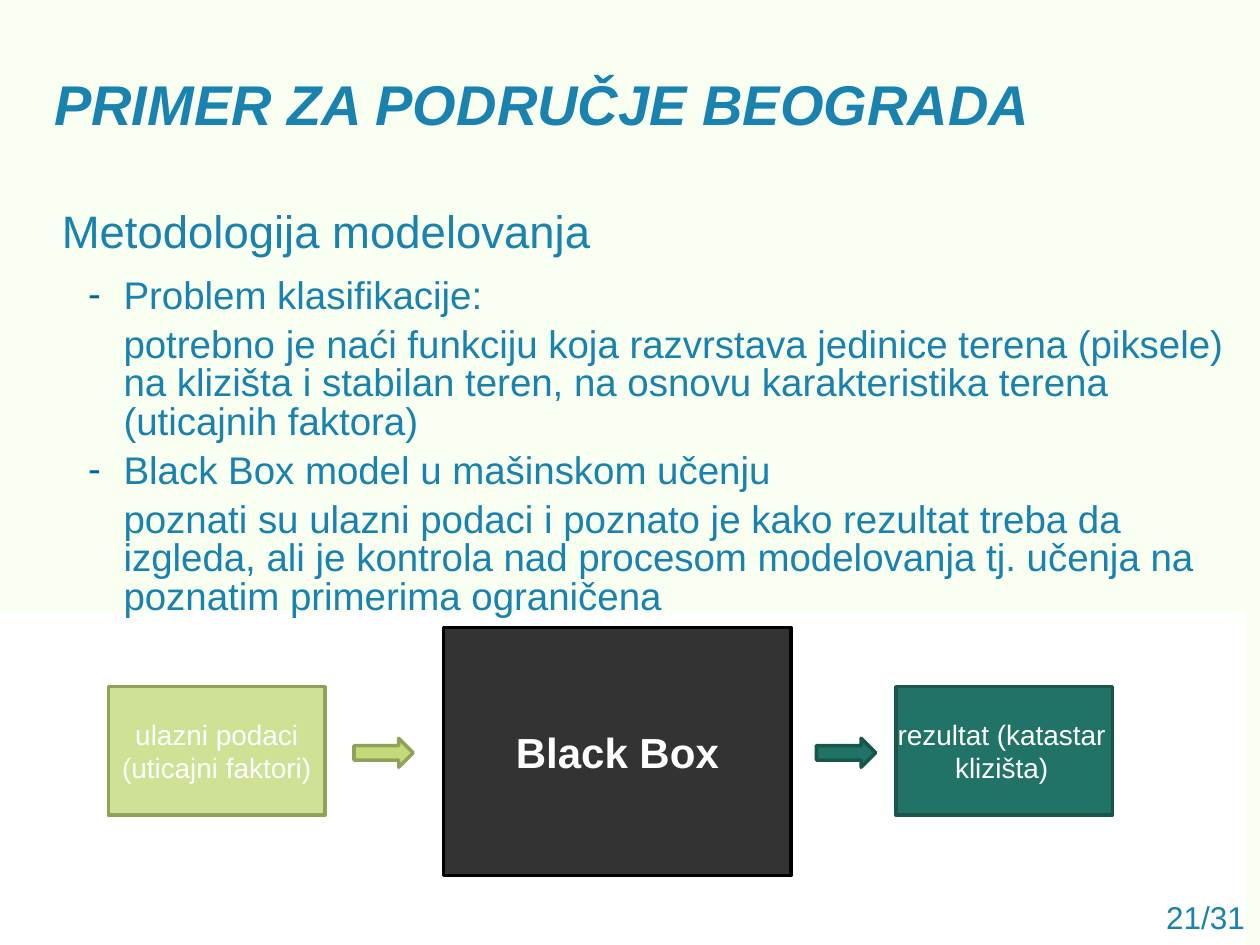
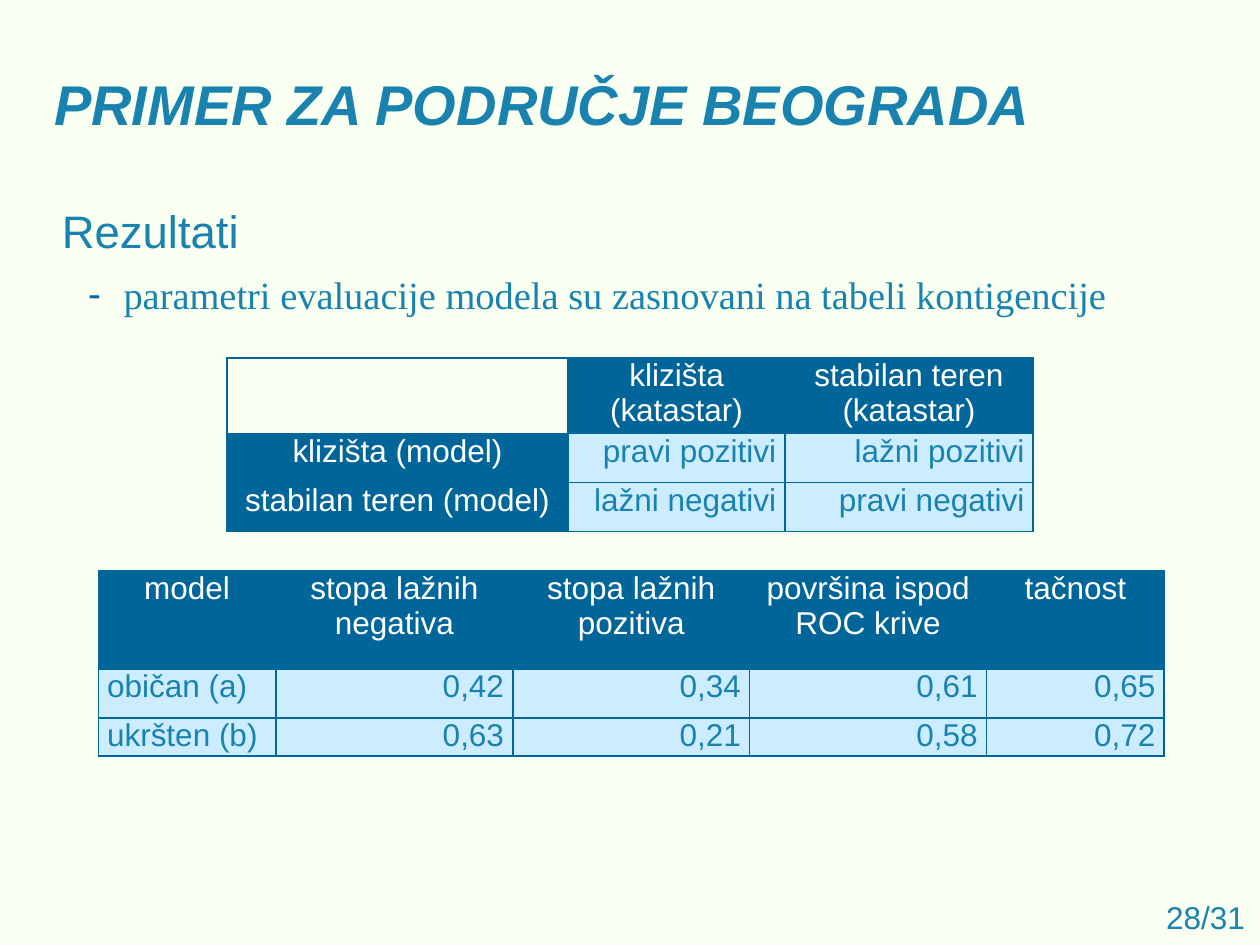
from lxml import etree
from pptx import Presentation
from pptx.dml.color import RGBColor
from pptx.enum import shapes, text
from pptx.oxml import ns
from pptx.util import Inches, Pt

CREAM = RGBColor(0xF9, 0xFF, 0xF1)
WHITE = RGBColor(0xFF, 0xFF, 0xFF)
BLACK = RGBColor(0x00, 0x00, 0x00)
BLUE = RGBColor(0x19, 0x82, 0xAF)
NAVY = RGBColor(0x00, 0x66, 0x99)
PALE = RGBColor(0xCC, 0xEC, 0xFF)
LIME = RGBColor(0xC3, 0xDA, 0x7A)
OLIVE = RGBColor(0x90, 0xA1, 0x5A)
TEAL = RGBColor(0x20, 0x73, 0x66)
PINE = RGBColor(0x18, 0x56, 0x4C)

LEFT, MID, RIGHT = text.PP_ALIGN.LEFT, text.PP_ALIGN.CENTER, text.PP_ALIGN.RIGHT
JUST = text.PP_ALIGN.JUSTIFY
RECT, ARROW = shapes.MSO_SHAPE.RECTANGLE, shapes.MSO_SHAPE.RIGHT_ARROW


def add(parent, tag, **attrs):
    """Append a drawing element."""
    return etree.SubElement(parent, ns.qn("a:" + tag), attrs)


def style(para, size, color, align=LEFT, face="Arial"):
    """Set the font and alignment of a paragraph."""
    para.alignment = align
    para.font.name = face
    para.font.size = Pt(size)
    para.font.color.rgb = color


prs = Presentation()
prs.slide_width, prs.slide_height = Inches(10), Inches(7.5)
back = prs.slide_master.background.fill
back.solid()
back.fore_color.rgb = CREAM

# Wording of each page: number, heading, (has dash, line) items, face, alignment
pages = [
    ("21/31", "Metodologija modelovanja", [
        (True, "Problem klasifikacije:"),
        (False, "potrebno je naći funkciju koja razvrstava jedinice terena (piksele) "
                "na klizišta i stabilan teren, na osnovu karakteristika terena "
                "(uticajnih faktora)"),
        (True, "Black Box model u mašinskom učenju"),
        (False, "poznati su ulazni podaci i poznato je kako rezultat treba da izgleda, "
                "ali je kontrola nad procesom modelovanja tj. učenja na poznatim "
                "primerima ograničena"),
    ], "Arial", LEFT),
    ("28/31", "Rezultati", [
        (True, "parametri evaluacije modela su zasnovani na tabeli kontigencije"),
    ], "Times New Roman", JUST),
]

# Title, list and page number
slides = []
for num, head, items, face, align in pages:
    slide = prs.slides.add_slide(prs.slide_layouts[1])
    slides.append(slide)
    title, body = slide.placeholders
    note = slide.shapes.add_textbox(Inches(7.65), Inches(7.08), Inches(2.33), Inches(0.4))
    note.text_frame.text = num
    style(note.text_frame.paragraphs[0], 18, BLUE, RIGHT)

    title.left, title.top, title.width, title.height = map(Inches, (0.33, 0.5, 9.5, 0.92))
    frame = title.text_frame
    frame.text = "PRIMER ZA PODRUČJE BEOGRADA"
    frame.auto_size = text.MSO_AUTO_SIZE.NONE
    frame.vertical_anchor = text.MSO_ANCHOR.TOP
    para = frame.paragraphs[0]
    style(para, 32, BLUE)
    para.font.bold = para.font.italic = True

    body.left, body.top, body.width, body.height = map(Inches, (0.49, 1.61, 9.45, 4.68))
    frame = body.text_frame
    frame.auto_size = text.MSO_AUTO_SIZE.NONE
    frame.margin_left = frame.margin_right = frame.margin_top = frame.margin_bottom = 0
    frame.text = head
    para = frame.paragraphs[0]
    props = para._p.get_or_add_pPr()
    props.set("marL", "0")
    props.set("indent", "0")
    add(props, "buNone")
    style(para, 26, BLUE)
    para.space_before, para.space_after = Pt(0), Pt(12)
    for dash, line in items:
        para = frame.add_paragraph()
        para.text = line
        para.level = 1
        props = para._p.get_or_add_pPr()
        props.set("marL", str(Inches(0.49)))
        props.set("indent", str(Inches(-0.28) if dash else 0))
        if dash:
            add(add(props, "buClr"), "srgbClr", val=str(NAVY))
            add(props, "buChar", char="-")
        else:
            add(props, "buNone")
        style(para, 22, BLUE, align, face)
        para.line_spacing = Pt(22)
        para.space_before, para.space_after = Pt(0), Pt(6)

# Black box diagram: white band first, then boxes and arrows
flow, results = slides
parts = [
    (RECT, 0, 4.86, 9.89, 2.64, WHITE, 100, None, "", 16),
    (RECT, 0.86, 5.45, 1.72, 1.02, LIME, 80, OLIVE, "ulazni podaci (uticajni faktori)", 16),
    (RECT, 7.11, 5.45, 1.72, 1.02, TEAL, 100, PINE, "rezultat (katastar klizišta)", 16),
    (RECT, 3.52, 4.98, 2.76, 1.97, BLACK, 80, BLACK, "Black Box", 24),
    (ARROW, 2.81, 5.86, 0.47, 0.23, LIME, 100, OLIVE, "", 16),
    (ARROW, 6.48, 5.86, 0.47, 0.23, TEAL, 100, PINE, "", 16),
]
for kind, x, y, w, h, color, alpha, edge, label, size in parts:
    box = flow.shapes.add_shape(kind, Inches(x), Inches(y), Inches(w), Inches(h))
    box.shadow.inherit = False
    box.fill.solid()
    box.fill.fore_color.rgb = color
    if alpha < 100:
        tint = box._element.spPr.find(".//" + ns.qn("a:srgbClr"))
        add(tint, "alpha", val=str(alpha * 1000))
    if edge is None:
        box.line.fill.background()
        flow.shapes._spTree.insert(2, box._element)
    else:
        box.line.color.rgb = edge
        box.line.width = Pt(2)
    if label:
        frame = box.text_frame
        frame.text = label
        frame.word_wrap = True
        frame.vertical_anchor = text.MSO_ANCHOR.MIDDLE
        style(frame.paragraphs[0], size, WHITE, MID)
        frame.paragraphs[0].font.bold = size == 24
        if color == TEAL:
            frame.margin_left, frame.margin_right = 0, Inches(0.04)

# Result tables: place, columns, rows, whether the first column is a header, cells
tables = [
    (0.78, 4.53, [1.41, 1.88, 1.88, 1.88, 1.41], [0.78, 0.39, 0.28], False, [
        ["model", "stopa lažnih negativa", "stopa lažnih pozitiva",
         "površina ispod ROC krive", "tačnost"],
        ["običan (a)", "0,42", "0,34", "0,61", "0,65"],
        ["ukršten (b)", "0,63", "0,21", "0,58", "0,72"],
    ]),
    (1.8, 2.84, [2.71, 1.72, 1.97], [0.56, 0.39, 0.39], True, [
        ["", "klizišta\n(katastar)", "stabilan teren\n(katastar)"],
        ["klizišta (model)", "pravi pozitivi", "lažni pozitivi"],
        ["stabilan teren (model)", "lažni negativi", "pravi negativi"],
    ]),
]
for x, y, cols, rows, side, data in tables:
    grid = results.shapes.add_table(len(rows), len(cols), Inches(x), Inches(y),
                                    Inches(sum(cols)), Inches(sum(rows))).table
    grid.first_row = grid.horz_banding = False
    for col, w in zip(grid.columns, cols):
        col.width = Inches(w)
    for row, h in zip(grid.rows, rows):
        row.height = Inches(h)
    for r, line in enumerate(data):
        for c, word in enumerate(line):
            cell = grid.cell(r, c)
            cell.margin_left = cell.margin_right = Inches(0.07)
            cell.margin_top = cell.margin_bottom = 0
            props = cell._tc.get_or_add_tcPr()
            for edge in ("lnL", "lnR", "lnT", "lnB"):
                fill = add(add(props, edge, w=str(Pt(1))), "solidFill")
                add(fill, "srgbClr", val=str(NAVY))
            if not word:
                cell.fill.background()
                continue
            top = r == 0 or (side and c == 0)
            cell.fill.solid()
            cell.fill.fore_color.rgb = NAVY if top else PALE
            cell.text = word
            align = MID if top else RIGHT if c else LEFT
            for para in cell.text_frame.paragraphs:
                style(para, 18, WHITE if top else BLUE, align)

prs.save("out.pptx")
